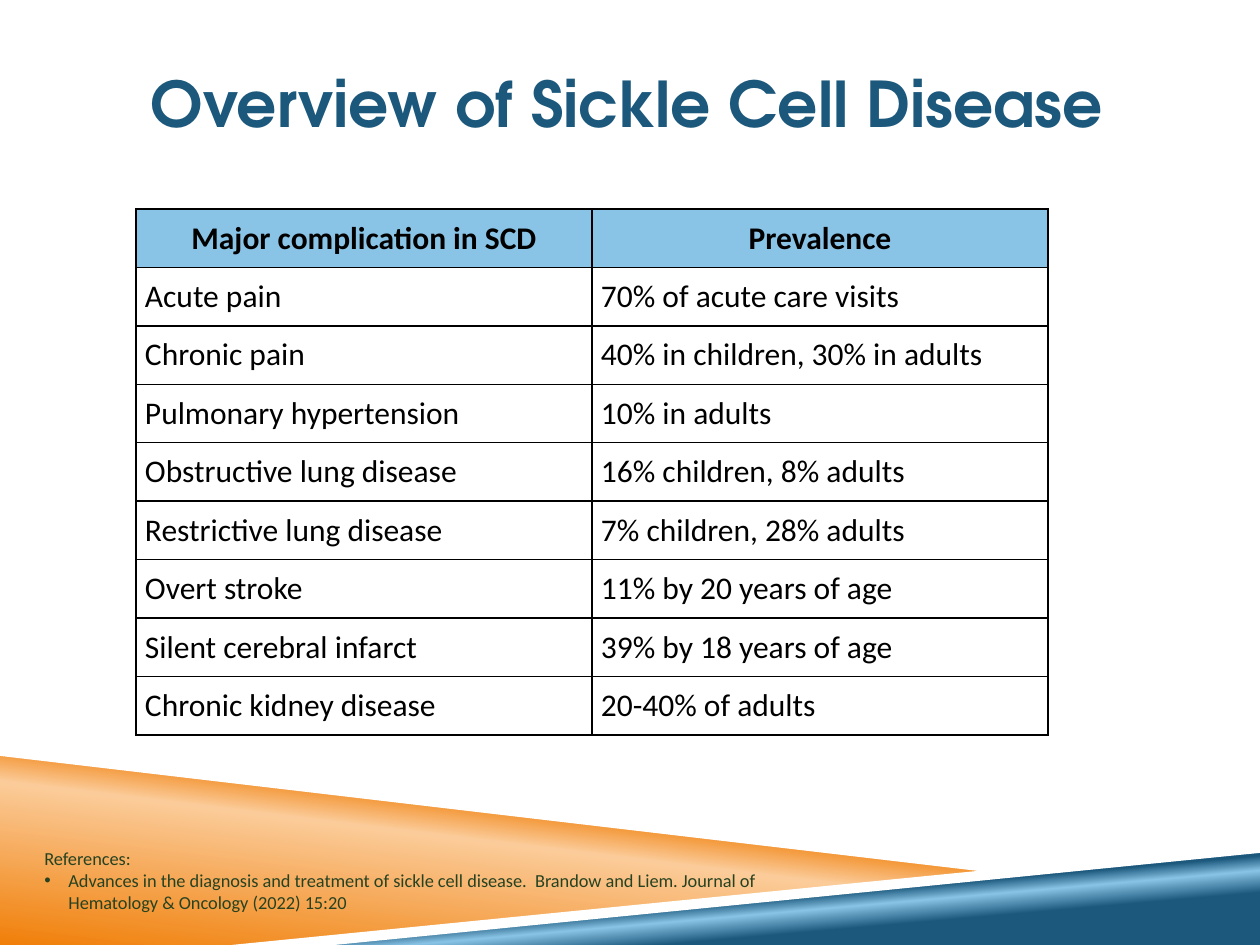
from lxml import etree
from pptx import Presentation
from pptx import util as u
from pptx.dml import color
from pptx.enum import text
from pptx.oxml import ns

PX = 914400 // 126
NAVY, SKY, ORANGE, PEACH = "1B587C", "89C3E5", "F07F09", "FBCC9A"
WHITE, BLACK, GREEN = "FFFFFF", "000000", "274221"

COMPLICATIONS = [
    ("Major complication in SCD", "Prevalence"),
    ("Acute pain", "70% of acute care visits"),
    ("Chronic pain", "40% in children, 30% in adults"),
    ("Pulmonary hypertension", "10% in adults"),
    ("Obstructive lung disease", "16% children, 8% adults"),
    ("Restrictive lung disease", "7% children, 28% adults"),
    ("Overt stroke", "11% by 20 years of age"),
    ("Silent cerebral infarct", "39% by 18 years of age"),
    ("Chronic kidney disease", "20-40% of adults"),
]
CITATION = ("Advances in the diagnosis and treatment of sickle cell disease.  "
            "Brandow and Liem. Journal of Hematology & Oncology (2022) 15:20")


def px(*lengths):
    return [length * PX for length in lengths]


def rgb(code):
    return color.RGBColor.from_string(code)


def add_xml(parent, tag, **attributes):
    return etree.SubElement(parent, ns.qn(tag), attributes)


def write(paragraph, words, size=18, colour=BLACK, font="Calibri", bold=False,
          align=text.PP_ALIGN.LEFT, bullet=None, indent=0):
    paragraph.alignment = align
    if bullet:
        properties = paragraph._p.get_or_add_pPr()
        properties.set("marL", str(indent * PX))
        properties.set("indent", str(-indent * PX))
        add_xml(properties, "a:buFont", typeface="Arial")
        add_xml(properties, "a:buChar", char=bullet)
    run = paragraph.add_run()
    run.text = words
    run.font.size = u.Pt(size)
    run.font.name = font
    run.font.bold = bold
    run.font.color.rgb = rgb(colour)


def set_margins(box, left, top, right, bottom):
    box.margin_left, box.margin_top, box.margin_right, box.margin_bottom = px(
        left, top, right, bottom)


def add_band(slide, corners, colour=WHITE, stops=None, angle=0):
    outline = slide.shapes.build_freeform(*corners[0], scale=PX)
    outline.add_line_segments(corners[1:], close=True)
    band = outline.convert_to_shape()
    band.shadow.inherit = False
    band.line.fill.background()
    if not stops:
        band.fill.solid()
        band.fill.fore_color.rgb = rgb(colour)
        return
    band.fill.gradient()
    gradient = band._element.spPr.find(ns.qn("a:gradFill"))
    stop_list = gradient.find(ns.qn("a:gsLst"))
    stop_list.clear()
    for percent, shade in stops:
        stop = add_xml(stop_list, "a:gs", pos=str(percent * 1000))
        add_xml(stop, "a:srgbClr", val=shade)
    direction = gradient.find(ns.qn("a:lin"))
    direction.set("ang", str(angle * 60000))
    direction.set("scaled", "0")


def add_bands(slide):
    add_band(slide, [(0, 752), (998, 872), (252, 945), (0, 945)],
             stops=[(0, ORANGE), (52, PEACH), (66, ORANGE)], angle=277)
    add_band(slide, [(249, 945), (1260, 847), (1260, 945)],
             stops=[(28, NAVY), (40, SKY), (48, NAVY)], angle=265)
    add_band(slide, [(0, 746), (0, 756), (995, 873), (1048, 869)])
    add_band(slide, [(1260, 843), (232, 945), (335, 945), (1260, 853)])


def add_title(slide, words):
    title = slide.shapes.title
    title.left, title.top, title.width, title.height = px(84, 42, 1086, 121)
    frame = title.text_frame
    frame.vertical_anchor = text.MSO_ANCHOR.MIDDLE
    set_margins(frame, 0, 6, 0, 6)
    write(frame.paragraphs[0], words, size=36, colour=NAVY,
          font="TeX Gyre Adventor", bold=True, align=text.PP_ALIGN.CENTER)


def add_borders(cell):
    properties = cell._tc.get_or_add_tcPr()
    for side in ("a:lnL", "a:lnR", "a:lnT", "a:lnB"):
        border = add_xml(properties, side, w=str(u.Pt(1)))
        add_xml(add_xml(border, "a:solidFill"), "a:srgbClr", val=BLACK)


def add_prevalence_table(slide, rows):
    height = 526 * PX
    table = slide.shapes.add_table(
        len(rows), 2, *px(136, 209, 912), height).table
    for column in table.columns:
        column.width = 456 * PX
    for r, entries in enumerate(rows):
        table.rows[r].height = height // len(rows)
        header = r == 0
        for c, words in enumerate(entries):
            cell = table.cell(r, c)
            add_borders(cell)
            cell.fill.solid()
            cell.fill.fore_color.rgb = rgb(SKY if header else WHITE)
            cell.vertical_anchor = text.MSO_ANCHOR.MIDDLE
            set_margins(cell, 9, 0, 9, 0)
            align = text.PP_ALIGN.CENTER if header else text.PP_ALIGN.LEFT
            write(cell.text_frame.paragraphs[0], words, bold=header, align=align)


def add_references(slide):
    frame = slide.shapes.add_textbox(*px(32, 841, 788, 79)).text_frame
    frame.word_wrap = True
    frame.auto_size = text.MSO_AUTO_SIZE.SHAPE_TO_FIT_TEXT
    write(frame.paragraphs[0], "References:", size=10.5, colour=GREEN)
    write(frame.add_paragraph(), CITATION, size=10.5, colour=GREEN,
          bullet="•", indent=24)


def main():
    deck = Presentation()
    deck.slide_width, deck.slide_height = u.Inches(10), u.Inches(7.5)
    slide = deck.slides.add_slide(deck.slide_layouts[5])
    add_bands(slide)
    add_title(slide, "Overview of Sickle Cell Disease")
    add_prevalence_table(slide, COMPLICATIONS)
    add_references(slide)
    deck.save("out.pptx")


if __name__ == "__main__":
    main()
